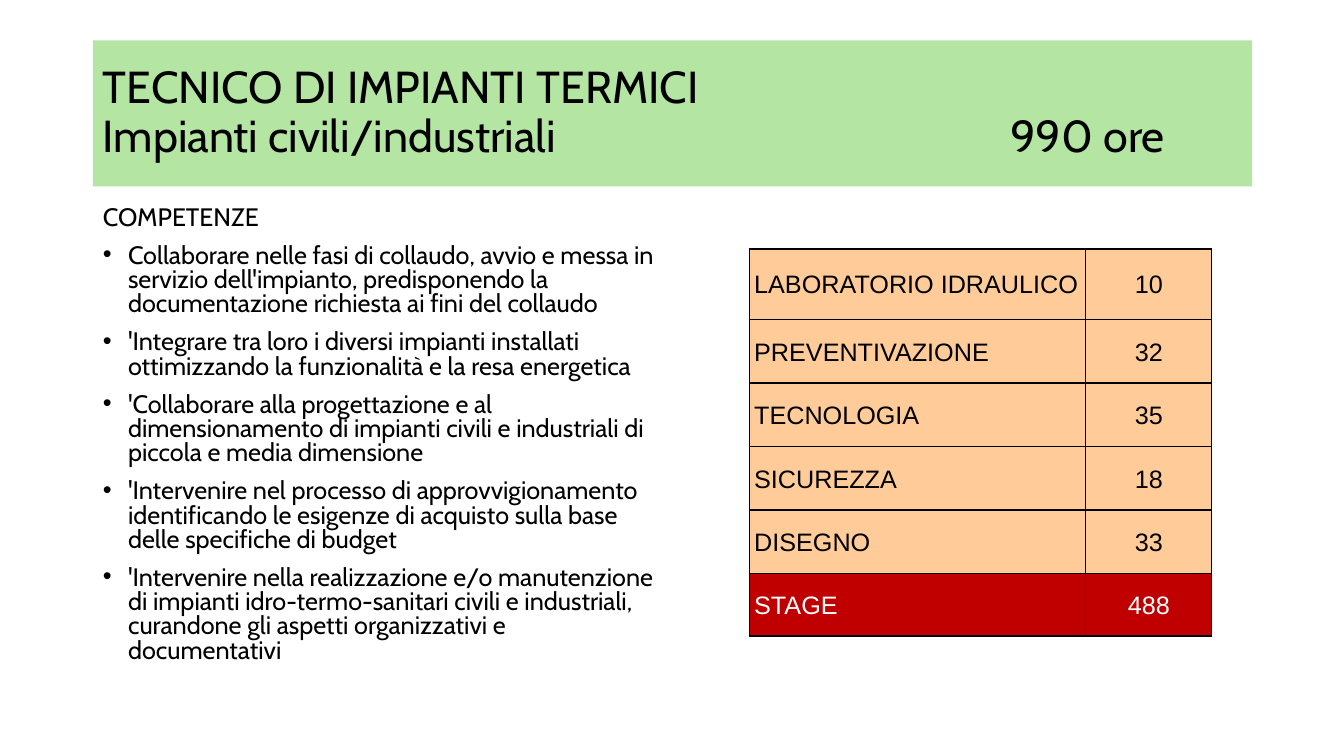
from lxml import etree
from pptx import Presentation
from pptx.dml.color import RGBColor
from pptx.enum.text import MSO_ANCHOR, MSO_AUTO_SIZE, PP_ALIGN
from pptx.oxml.ns import qn
from pptx.util import Inches, Pt

LEFT, CENTER = PP_ALIGN.LEFT, PP_ALIGN.CENTER
TOP, MIDDLE = MSO_ANCHOR.TOP, MSO_ANCHOR.MIDDLE
NO_FIT = MSO_AUTO_SIZE.NONE

TITLE = "TECNICO DI IMPIANTI TERMICI  \vImpianti civili/industriali\t\t\t\t\t990 ore"
HEAD = "COMPETENZE"
SKILLS = [
    "Collaborare nelle fasi di collaudo, avvio e messa in servizio dell'impianto, "
    "predisponendo la documentazione richiesta ai fini del collaudo",
    "'Integrare tra loro i diversi impianti installati ottimizzando la "
    "funzionalità e la resa energetica",
    "'Collaborare alla progettazione e al dimensionamento di impianti civili e "
    "industriali di piccola e media dimensione",
    "'Intervenire nel processo di approvvigionamento identificando le esigenze "
    "di acquisto sulla base delle specifiche di budget",
    "'Intervenire nella realizzazione e/o manutenzione di impianti "
    "idro-termo-sanitari civili e industriali, curandone gli aspetti "
    "organizzativi e documentativi",
]
HOURS = [
    ("LABORATORIO IDRAULICO", "10"),
    ("PREVENTIVAZIONE", "32"),
    ("TECNOLOGIA", "35"),
    ("SICUREZZA", "18"),
    ("DISEGNO", "33"),
    ("STAGE", "488"),
]
COLS = [3.34, 1.25]
ROWS = [0.7, 0.63, 0.63, 0.63, 0.63, 0.62]
BLACK, WHITE, GREEN, PEACH, RED = "000000", "FFFFFF", "B4E5A2", "FFCC99", "C00000"


def paint(fill, color):
    fill.solid()
    fill.fore_color.rgb = RGBColor.from_string(color)


def assign(item, values):
    for name, value in values.items():
        setattr(item, name, value)


def style(para, face, size, color, **values):
    assign(para, values)
    for run in para.runs:
        assign(run.font, {"name": face, "size": Pt(size)})
        paint(run.font.fill, color)


def place(shape, left, top, width, height, anchor):
    box = {"left": left, "top": top, "width": width, "height": height}
    assign(shape, {name: Inches(value) for name, value in box.items()})
    assign(shape.text_frame, {"word_wrap": True, "auto_size": NO_FIT,
                              "vertical_anchor": anchor})


def bullet(para, mark):
    props = para._p.get_or_add_pPr()
    indent = Inches(0.25) if mark else 0
    props.set("marL", str(indent))
    props.set("indent", str(-indent))
    if mark:
        etree.SubElement(props, qn("a:buFont")).set("typeface", "Arial")
        etree.SubElement(props, qn("a:buChar")).set("char", mark)
    else:
        etree.SubElement(props, qn("a:buNone"))


def border(cell):
    props = cell._tc.get_or_add_tcPr()
    for spot, side in enumerate(("lnL", "lnR", "lnT", "lnB")):
        line = etree.Element(qn("a:" + side), w=str(Pt(1)))
        fill = etree.SubElement(line, qn("a:solidFill"))
        etree.SubElement(fill, qn("a:srgbClr")).set("val", BLACK)
        props.insert(spot, line)


def add_title(slide):
    title = slide.shapes.title
    place(title, 0.92, 0.4, 11.5, 1.45, MIDDLE)
    paint(title.fill, GREEN)
    title.text_frame.text = TITLE
    para = title.text_frame.paragraphs[0]
    style(para, "Cabin", 32, BLACK, alignment=LEFT, line_spacing=0.9)
    para._p.get_or_add_pPr().set("defTabSz", str(Inches(1)))


def add_skills(slide):
    body = slide.placeholders[1]
    place(body, 0.92, 2, 5.67, 4.76, TOP)
    body.text_frame.text = "\n".join([HEAD] + SKILLS)
    for index, para in enumerate(body.text_frame.paragraphs):
        style(para, "Cabin", 18, BLACK, alignment=LEFT, line_spacing=0.8,
              space_before=Pt(10))
        bullet(para, "•" if index else None)


def add_hours(slide):
    frame = slide.shapes.add_table(
        len(ROWS), len(COLS), Inches(7.43), Inches(2.47),
        Inches(sum(COLS)), Inches(sum(ROWS)))
    table = frame.table
    assign(table, {"first_row": False, "horz_banding": False})
    for col, width in zip(table.columns, COLS):
        col.width = Inches(width)
    for row, height, texts in zip(table.rows, ROWS, HOURS):
        row.height = Inches(height)
        stage = texts[0] == "STAGE"
        for cell, text, align in zip(row.cells, texts, (LEFT, CENTER)):
            cell.text = text
            assign(cell, {"vertical_anchor": MIDDLE,
                          "margin_left": Inches(0.05), "margin_right": Inches(0.05),
                          "margin_top": 0, "margin_bottom": 0})
            paint(cell.fill, RED if stage else PEACH)
            border(cell)
            style(cell.text_frame.paragraphs[0], "Arial", 18,
                  WHITE if stage else BLACK, alignment=align,
                  line_spacing=1.07, space_after=Pt(8))


def main():
    deck = Presentation()
    deck.slide_width, deck.slide_height = Inches(13.33), Inches(7.5)
    slide = deck.slides.add_slide(deck.slide_layouts[1])
    add_title(slide)
    add_skills(slide)
    add_hours(slide)
    deck.save("out.pptx")


if __name__ == "__main__":
    main()
